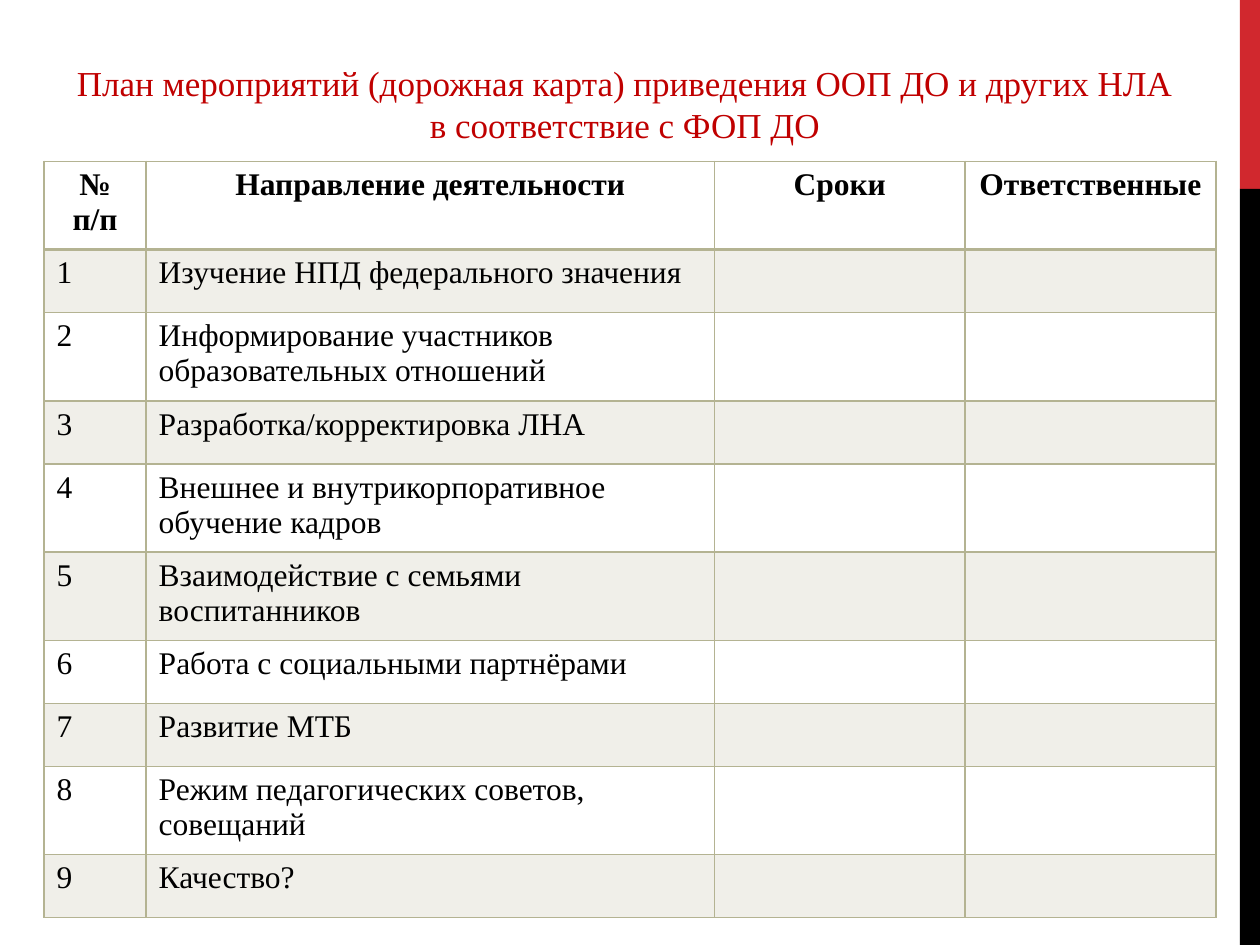
from lxml import etree
from pptx import Presentation
from pptx import util as u
from pptx.dml.color import RGBColor
from pptx.enum import shapes, text
from pptx.oxml.ns import qn

WIDTH, HEIGHT = 10, 7.5
HEADERS = ["№ п/п", "Направление деятельности", "Сроки", "Ответственные"]
ACTIVITIES = [
    "Изучение НПД федерального значения",
    "Информирование участников образовательных отношений",
    "Разработка/корректировка ЛНА",
    "Внешнее и внутрикорпоративное обучение кадров",
    "Взаимодействие с семьями воспитанников",
    "Работа с социальными партнёрами",
    "Развитие МТБ",
    "Режим педагогических советов, совещаний",
    "Качество?",
]
COLUMN_WIDTHS = [0.81, 4.51, 1.99, 1.99]
ONE_LINE, TWO_LINES = 0.5, 0.7
LINE_LENGTH = 36  # characters that fit on one line of the activity column


def color(value):
    return RGBColor.from_string(value)


def write(frame, words, size=18, fill="000000", bold=False, centered=False):
    paragraph = frame.paragraphs[0]
    paragraph.alignment = text.PP_ALIGN.CENTER if centered else text.PP_ALIGN.LEFT
    run = paragraph.add_run()
    run.text = words
    run.font.name = Builder.font
    run.font.size = u.Pt(size)
    run.font.bold = bold
    run.font.color.rgb = color(fill)


class Builder:
    font = "Times New Roman"
    red, black, title_red, olive = "D1282E", "000000", "C00000", "B4B392"

    def __init__(self, slide):
        self.slide = slide

    def box(self, left, top, width, height):
        """Turn shares of the slide's size into lengths."""
        return (u.Inches(left * WIDTH), u.Inches(top * HEIGHT),
                u.Inches(width * WIDTH), u.Inches(height * HEIGHT))

    def bar(self, fill, *shares):
        shape = self.slide.shapes.add_shape(
            shapes.MSO_SHAPE.RECTANGLE, *self.box(*shares))
        shape.shadow.inherit = False
        shape.fill.solid()
        shape.fill.fore_color.rgb = color(fill)
        shape.line.fill.background()

    def title(self, words, *shares):
        frame = self.slide.shapes.add_textbox(*self.box(*shares)).text_frame
        frame.word_wrap = True
        write(frame, words, size=20, fill=self.title_red, centered=True)

    def borders(self, cell, **widths):
        """Draw the four cell edges, 1 pt unless a width is given."""
        properties = cell._tc.get_or_add_tcPr()
        for position, side in enumerate(["L", "R", "T", "B"]):
            line = etree.Element(qn(f"a:ln{side}"),
                                 w=str(u.Pt(widths.get(side, 1))))
            solid = etree.SubElement(line, qn("a:solidFill"))
            etree.SubElement(solid, qn("a:srgbClr"), val=self.olive)
            properties.insert(position, line)

    def shade(self, cell, banded):
        if not banded:
            cell.fill.background()
            return
        cell.fill.solid()
        cell.fill.fore_color.rgb = color(self.olive)
        tint = cell._tc.tcPr.find(".//" + qn("a:srgbClr"))
        etree.SubElement(tint, qn("a:alpha"), val="20000")

    def table(self, rows, heights, left, top):
        table = self.slide.shapes.add_table(
            len(rows), len(COLUMN_WIDTHS),
            *self.box(left, top, sum(COLUMN_WIDTHS) / WIDTH,
                      sum(heights) / HEIGHT)).table
        for column, width in zip(table.columns, COLUMN_WIDTHS):
            column.width = u.Inches(width)
        for index, (words, height) in enumerate(zip(rows, heights)):
            table.rows[index].height = u.Inches(height)
            header = index == 0
            edges = {0: {"B": 2}, 1: {"T": 2}}.get(index, {})
            for cell, entry in zip(table.rows[index].cells, words):
                self.shade(cell, banded=index % 2 == 1)
                self.borders(cell, **edges)
                if entry:
                    write(cell.text_frame, entry, bold=header, centered=header)


def main():
    presentation = Presentation()
    presentation.slide_width = u.Inches(WIDTH)
    presentation.slide_height = u.Inches(HEIGHT)
    builder = Builder(presentation.slides.add_slide(presentation.slide_layouts[6]))

    # Side stripe: red fifth above black
    builder.bar(builder.red, 0.984, 0, 0.016, 0.2)
    builder.bar(builder.black, 0.984, 0.2, 0.016, 0.8)

    # Heading
    builder.title("План мероприятий (дорожная карта) приведения ООП ДО и "
                  "других НЛА в соответствие с ФОП ДО",
                  0.043, 0.44 / HEIGHT, 0.906, 0.77 / HEIGHT)

    # Road map: numbered activities with empty dates and owners
    rows = [HEADERS] + [[str(number), activity, "", ""]
                        for number, activity in enumerate(ACTIVITIES, 1)]
    heights = [TWO_LINES] + [TWO_LINES if len(activity) > LINE_LENGTH else ONE_LINE
                             for activity in ACTIVITIES]
    builder.table(rows, heights, 0.035, 1.28 / HEIGHT)

    presentation.save("out.pptx")


if __name__ == "__main__":
    main()
